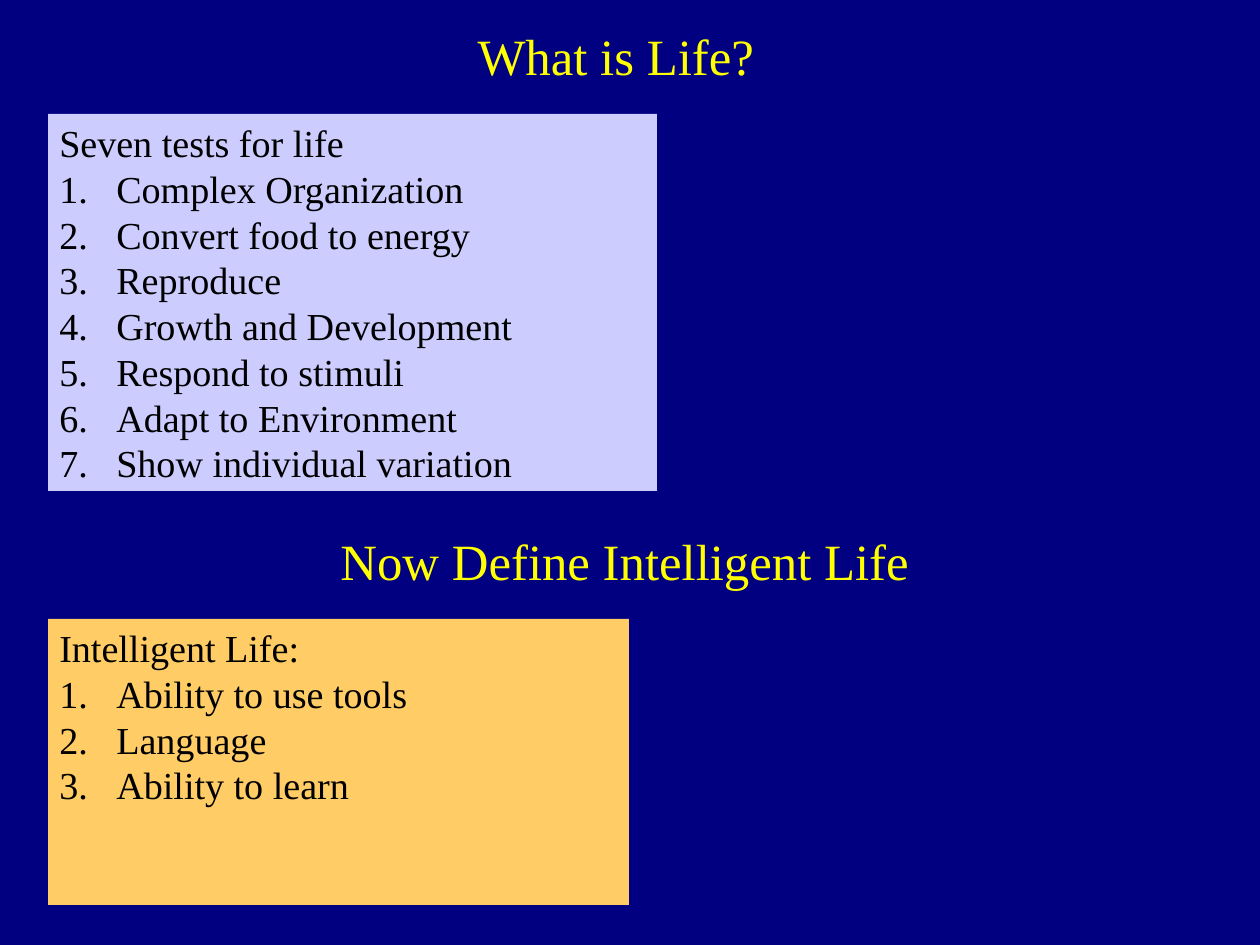
"""Build the slide on the tests for life and intelligent life."""
from dataclasses import dataclass

from lxml import etree
from pptx import Presentation
from pptx.dml.color import RGBColor
from pptx.enum.shapes import MSO_SHAPE
from pptx.enum.text import MSO_ANCHOR, MSO_AUTO_SIZE, PP_ALIGN
from pptx.oxml.ns import qn
from pptx.slide import Slide
from pptx.text.text import TextFrame, _Paragraph
from pptx.util import Emu, Pt

RECTANGLE = MSO_SHAPE.RECTANGLE
TOP = MSO_ANCHOR.TOP
NO_AUTOFIT = MSO_AUTO_SIZE.NONE
LEFT, CENTER = PP_ALIGN.LEFT, PP_ALIGN.CENTER

EMU_PER_PX = 8000
PAGE_WIDTH, PAGE_HEIGHT = 1260, 945
LIST_INDENT = 57


@dataclass(frozen=True)
class Theme:
    """Colours, font and type sizes of the slide."""

    font: str = "Times New Roman"
    background: str = "000080"
    title: str = "FFFF00"
    body: str = "000000"
    life: str = "CCCCFF"
    intelligence: str = "FFCC66"
    title_size: int = 32
    body_size: int = 24


@dataclass(frozen=True)
class Area:
    """Place and size in px."""

    left: int
    top: int
    width: int
    height: int

    def emu(self) -> tuple[Emu, ...]:
        """Return the four lengths in EMU."""
        return tuple(px(n) for n in (self.left, self.top, self.width, self.height))


@dataclass(frozen=True)
class Heading:
    """A centred title line."""

    area: Area
    text: str


@dataclass(frozen=True)
class Panel:
    """A filled box with a lead line and a numbered list."""

    area: Area
    fill: str
    lead: str
    items: tuple[str, ...]


THEME = Theme()
HEADINGS = (
    Heading(Area(86, 19, 1060, 72), "What is Life?"),
    Heading(Area(95, 524, 1060, 72), "Now Define Intelligent Life"),
)
PANELS = (
    Panel(
        Area(48, 114, 609, 377),
        THEME.life,
        "Seven tests for life",
        (
            "Complex Organization",
            "Convert food to energy",
            "Reproduce",
            "Growth and Development",
            "Respond to stimuli",
            "Adapt to Environment",
            "Show individual variation",
        ),
    ),
    Panel(
        Area(48, 619, 581, 286),
        THEME.intelligence,
        "Intelligent Life:",
        ("Ability to use tools", "Language", "Ability to learn"),
    ),
)


def px(length: int) -> Emu:
    """Turn px into EMU."""
    return Emu(length * EMU_PER_PX)


def prepare_frame(frame: TextFrame) -> None:
    """Make the text wrap and start at the top."""
    frame.word_wrap = True
    frame.auto_size = NO_AUTOFIT
    frame.vertical_anchor = TOP


def add_span(para: _Paragraph, text: str, size: int, color: str) -> None:
    """Add one styled run to a paragraph."""
    span = para.add_run()
    span.text = text
    span.font.name = THEME.font
    span.font.size = Pt(size)
    span.font.color.rgb = RGBColor.from_string(color)


def set_hanging_indent(para: _Paragraph, numbered: bool) -> None:
    """Hang the first line and number the paragraph if asked."""
    properties = para._p.get_or_add_pPr()
    properties.set("marL", str(px(LIST_INDENT)))
    properties.set("indent", str(px(-LIST_INDENT)))
    if numbered:
        etree.SubElement(properties, qn("a:buAutoNum"), type="arabicPeriod")
    else:
        etree.SubElement(properties, qn("a:buNone"))


def draw_heading(page: Slide, heading: Heading) -> None:
    """Draw a centred title line."""
    frame = page.shapes.add_textbox(*heading.area.emu()).text_frame
    prepare_frame(frame)
    para = frame.paragraphs[0]
    para.alignment = CENTER
    add_span(para, heading.text, THEME.title_size, THEME.title)


def draw_panel(page: Slide, panel: Panel) -> None:
    """Draw a filled box with its numbered list."""
    box = page.shapes.add_shape(RECTANGLE, *panel.area.emu())
    box.shadow.inherit = False
    box.fill.solid()
    box.fill.fore_color.rgb = RGBColor.from_string(panel.fill)
    box.line.fill.background()
    frame = box.text_frame
    prepare_frame(frame)
    for index, text in enumerate((panel.lead, *panel.items)):
        para = frame.add_paragraph() if index else frame.paragraphs[0]
        para.alignment = LEFT
        set_hanging_indent(para, numbered=index > 0)
        add_span(para, text, THEME.body_size, THEME.body)


def main() -> None:
    """Build and save the deck."""
    deck = Presentation()
    deck.slide_width, deck.slide_height = px(PAGE_WIDTH), px(PAGE_HEIGHT)
    page = deck.slides.add_slide(deck.slide_layouts[6])
    page.background.fill.solid()
    page.background.fill.fore_color.rgb = RGBColor.from_string(THEME.background)
    for panel, heading in zip(PANELS, HEADINGS):
        draw_panel(page, panel)
        draw_heading(page, heading)
    deck.save("out.pptx")


if __name__ == "__main__":
    main()
